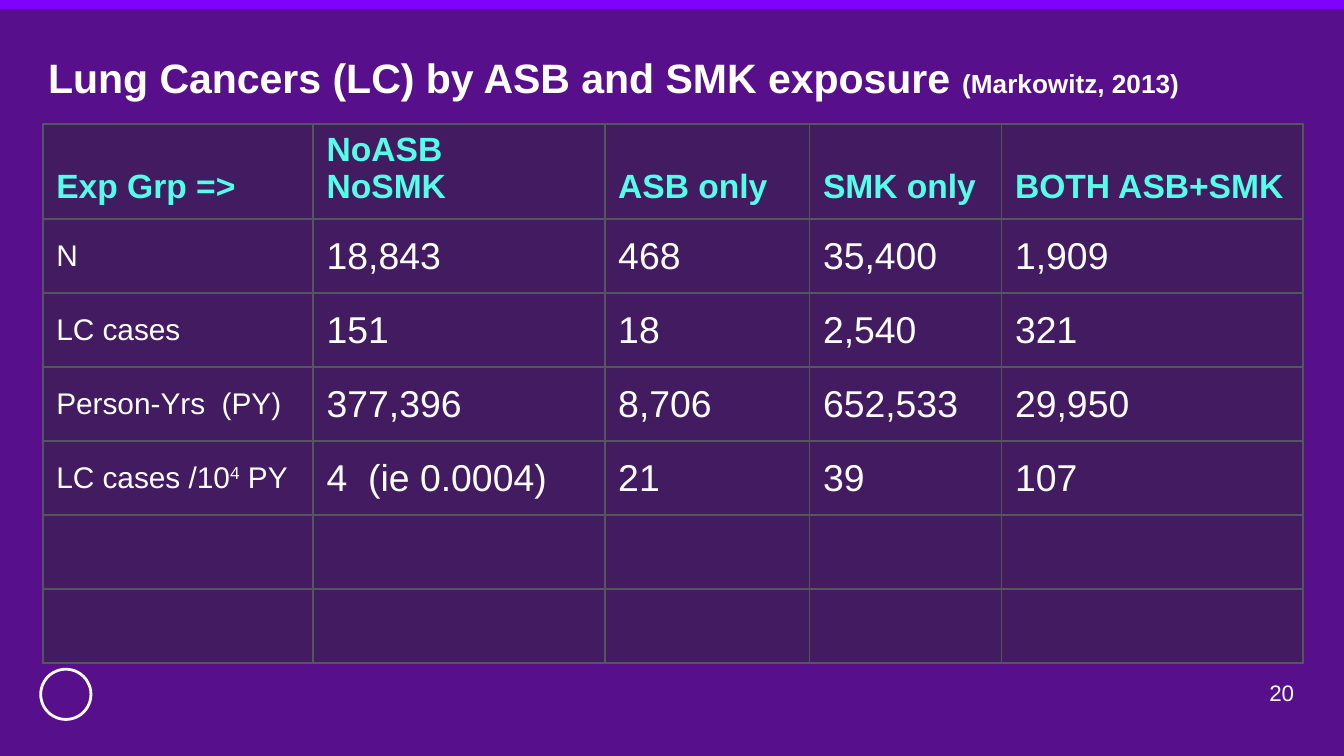
from lxml import etree
from pptx import Presentation
from pptx.dml.color import RGBColor
from pptx.enum.shapes import MSO_SHAPE
from pptx.enum.text import MSO_ANCHOR, MSO_AUTO_SIZE, PP_ALIGN
from pptx.oxml.ns import qn
from pptx.util import Cm, Pt

RECT, OVAL = MSO_SHAPE.RECTANGLE, MSO_SHAPE.OVAL
MIDDLE, BOTTOM = MSO_ANCHOR.MIDDLE, MSO_ANCHOR.BOTTOM
NO_FIT = MSO_AUTO_SIZE.NONE
RIGHT = PP_ALIGN.RIGHT
TITLE_ONLY = 5

FONT = "Arial"
COLORS = {
    "background": "580F8B",
    "band": "8000FF",
    "text": "FFFFFF",
    "header": "54FFE9",
    "cell": "2A2B2D",
    "border": "53565A",
}
CELL_ALPHA = 45000

COL_WIDTHS = [5.11, 5.51, 3.87, 3.63, 5.7]
HEADER_HEIGHT, ROW_HEIGHT = 1.8, 1.4
HEADERS = ["Exp Grp =>", "NoASB\nNoSMK", "ASB only", "SMK only", "BOTH ASB+SMK"]
# "^" sets off the superscript part of a label
ROWS = [
    ["N", "18,843", "468", "35,400", "1,909"],
    ["LC cases", "151", "18", "2,540", "321"],
    ["Person-Yrs  (PY)", "377,396", "8,706", "652,533", "29,950"],
    ["LC cases /10^4^ PY", "4  (ie 0.0004)", "21", "39", "107"],
    [""] * 5,
    [""] * 5,
]


def rgb(name):
    return RGBColor.from_string(COLORS[name])


def style(font, size, color="text", bold=False):
    font.name, font.size, font.bold = FONT, Pt(size), bold
    font.color.rgb = rgb(color)


def plain_frame(tf):
    tf.margin_left = tf.margin_right = tf.margin_top = tf.margin_bottom = 0
    tf.word_wrap, tf.auto_size, tf.vertical_anchor = True, NO_FIT, MIDDLE


def add_band(slide, box):
    sp = slide.shapes.add_shape(RECT, *map(Cm, box))
    sp.shadow.inherit = False
    sp.fill.solid()
    sp.fill.fore_color.rgb = rgb("band")
    sp.line.fill.background()


def add_emblem(slide, box):
    sp = slide.shapes.add_shape(OVAL, *map(Cm, box))
    sp.shadow.inherit = False
    sp.fill.background()
    sp.line.color.rgb = rgb("text")
    sp.line.width = Pt(1.5)


def place_title(slide, box, heading, citation):
    sp = slide.shapes.title
    sp.left, sp.top, sp.width, sp.height = map(Cm, box)
    plain_frame(sp.text_frame)
    p = sp.text_frame.paragraphs[0]
    p.alignment = PP_ALIGN.LEFT
    p.line_spacing = 0.9
    for text, size in ((heading, 22), (citation, 14)):
        r = p.add_run()
        r.text = text
        style(r.font, size, bold=True)


def add_page_number(slide, box, number):
    tf = slide.shapes.add_textbox(*map(Cm, box)).text_frame
    plain_frame(tf)
    p = tf.paragraphs[0]
    p.text = str(number)
    p.alignment = RIGHT
    style(p.font, 12)


def paint_cell(cell):
    """Give the cell thin borders and a half-transparent fill."""
    tc_pr = cell._tc.get_or_add_tcPr()
    for side in ("a:lnL", "a:lnR", "a:lnT", "a:lnB"):
        ln = etree.SubElement(tc_pr, qn(side), w=str(Pt(1)))
        fill = etree.SubElement(ln, qn("a:solidFill"))
        etree.SubElement(fill, qn("a:srgbClr"), val=COLORS["border"])
    cell.fill.solid()
    cell.fill.fore_color.rgb = rgb("cell")
    color = tc_pr.find(qn("a:solidFill")).find(qn("a:srgbClr"))
    etree.SubElement(color, qn("a:alpha"), val=str(CELL_ALPHA))


def write_cell(cell, text, size, color="text", bold=False):
    tf = cell.text_frame
    for i, line in enumerate(text.split("\n")):
        p = tf.add_paragraph() if i else tf.paragraphs[0]
        style(p.font, size, color, bold)
        for j, part in enumerate(line.split("^")):
            r = p.add_run()
            r.text = part
            if j % 2:
                r._r.get_or_add_rPr().set("baseline", "30000")


def add_exposure_table(slide, left, top):
    height = HEADER_HEIGHT + ROW_HEIGHT * len(ROWS)
    table = slide.shapes.add_table(
        len(ROWS) + 1, len(HEADERS),
        Cm(left), Cm(top), Cm(sum(COL_WIDTHS)), Cm(height)).table
    table.horz_banding = False
    for col, width in zip(table.columns, COL_WIDTHS):
        col.width = Cm(width)
    for i, texts in enumerate([HEADERS] + ROWS):
        table.rows[i].height = Cm(ROW_HEIGHT if i else HEADER_HEIGHT)
        for j, text in enumerate(texts):
            cell = table.cell(i, j)
            paint_cell(cell)
            if i == 0:
                cell.vertical_anchor = BOTTOM
                cell.margin_bottom = Cm(0.25)
                write_cell(cell, text, 18, "header", True)
            else:
                cell.vertical_anchor = MIDDLE
                if text:
                    write_cell(cell, text, 20 if j else 16)


def main():
    prs = Presentation()
    prs.slide_width, prs.slide_height = Cm(25.4), Cm(14.29)
    slide = prs.slides.add_slide(prs.slide_layouts[TITLE_ONLY])
    slide.background.fill.solid()
    slide.background.fill.fore_color.rgb = rgb("background")

    add_emblem(slide, (0.77, 12.65, 0.95, 0.95))
    add_band(slide, (0, 0, 25.4, 0.18))
    place_title(slide, (0.91, 0.94, 22.8, 1.14),
                "Lung Cancers (LC) by ASB and SMK exposure ", "(Markowitz, 2013)")
    add_page_number(slide, (23.67, 12.9, 0.79, 0.38), 20)
    add_exposure_table(slide, 0.81, 2.34)
    prs.save("out.pptx")


if __name__ == "__main__":
    main()
